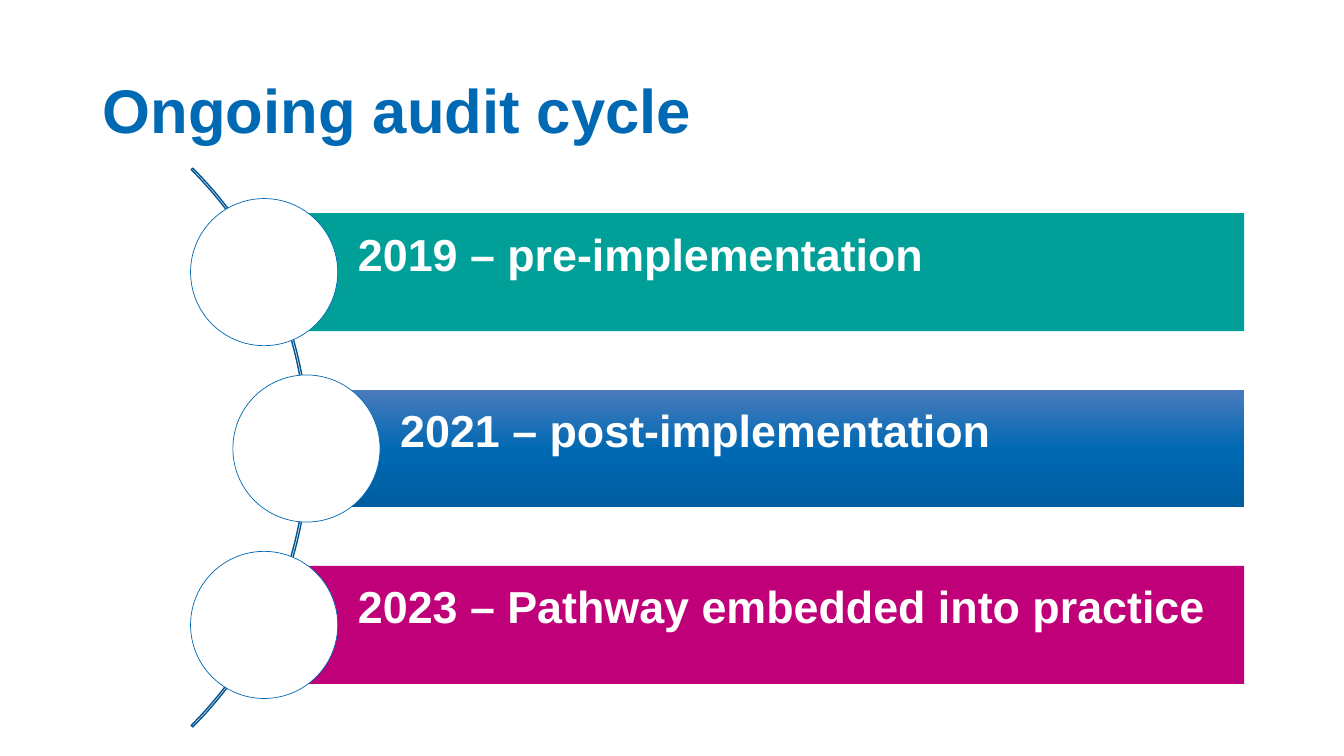
import copy

import pptx
import pptx.dml.color
import pptx.enum.shapes
import pptx.enum.text
import pptx.oxml.ns
import pptx.util
from pptx.util import Inches

RGBColor = pptx.dml.color.RGBColor
MSO_SHAPE = pptx.enum.shapes.MSO_SHAPE
MSO_ANCHOR = pptx.enum.text.MSO_ANCHOR

WHITE = RGBColor(0xFF, 0xFF, 0xFF)
BLUE = RGBColor(0x00, 0x69, 0xB3)
LIGHT_BLUE = RGBColor(0x4B, 0x7B, 0xBC)
DEEP_BLUE = RGBColor(0x00, 0x5D, 0x9F)
ARC_BLUE = RGBColor(0x00, 0x54, 0x8F)
TEAL = RGBColor(0x00, 0x9F, 0x98)
MAGENTA = RGBColor(0xBF, 0x00, 0x78)

BAR_RIGHT = 12.34
BAR_HEIGHT = 1.17
CIRCLE_SIZE = 1.46
FIRST_CENTRE = 2.7
STAGE_STEP = 1.75

STAGES = [
    ("2019 – pre-implementation", 2.62, [TEAL]),
    ("2021 – post-implementation", 3.04, [LIGHT_BLUE, BLUE, DEEP_BLUE]),
    ("2023 – Pathway embedded into practice", 2.62, [MAGENTA]),
]


def add_text(para, text, size, colour):
    para.alignment = pptx.enum.text.PP_ALIGN.LEFT
    span = para.add_run()
    span.text = text
    span.font.name = "Arial"
    span.font.size = pptx.util.Pt(size)
    span.font.bold = True
    span.font.color.rgb = colour


def fill_title(title, text):
    title.left, title.top = Inches(0.92), Inches(0.4)
    title.width, title.height = Inches(11.5), Inches(1.45)
    frame = title.text_frame
    frame.auto_size = pptx.enum.text.MSO_AUTO_SIZE.NONE
    frame.vertical_anchor = MSO_ANCHOR.MIDDLE
    frame.paragraphs[0].line_spacing = 0.9
    add_text(frame.paragraphs[0], text, 44, BLUE)


def add_plain_shape(page, kind, left, top, width, height):
    shape = page.shapes.add_shape(
        kind, Inches(left), Inches(top), Inches(width), Inches(height))
    shape.shadow.inherit = False
    return shape


def set_outline(shape, colour, width):
    shape.line.color.rgb = colour
    shape.line.width = pptx.util.Pt(width)


def paint(shape, colours):
    if len(colours) == 1:
        shape.fill.solid()
        shape.fill.fore_color.rgb = colours[0]
        return
    shape.fill.gradient()
    shape.fill.gradient_angle = 270
    stop_list = next(shape._element.spPr.iter(pptx.oxml.ns.qn("a:gsLst")))
    while len(stop_list) < len(colours):
        stop_list.append(copy.deepcopy(stop_list[-1]))
    for index, stop in enumerate(shape.fill.gradient_stops):
        stop.position = index / (len(colours) - 1)
        stop.color.rgb = colours[index]


def add_arc(page):
    arc = add_plain_shape(page, MSO_SHAPE.BLOCK_ARC, -4.78, 0.52, 7.84, 7.84)
    for index, value in enumerate((189, 27, 0.00275)):
        arc.adjustments[index] = value
    arc.fill.background()
    set_outline(arc, ARC_BLUE, 1)


def add_stage(page, centre, text, left, colours):
    bar = add_plain_shape(page, MSO_SHAPE.RECTANGLE, left,
                          centre - BAR_HEIGHT / 2, BAR_RIGHT - left, BAR_HEIGHT)
    paint(bar, colours)
    bar.line.fill.background()
    frame = bar.text_frame
    frame.word_wrap = True
    frame.vertical_anchor = MSO_ANCHOR.TOP
    frame.margin_left, frame.margin_right = Inches(0.93), Inches(0.09)
    frame.margin_top, frame.margin_bottom = Inches(0.13), Inches(0.09)
    add_text(frame.paragraphs[0], text, 32, WHITE)

    circle = add_plain_shape(page, MSO_SHAPE.OVAL, left - CIRCLE_SIZE / 2,
                             centre - CIRCLE_SIZE / 2, CIRCLE_SIZE, CIRCLE_SIZE)
    paint(circle, [WHITE])
    set_outline(circle, BLUE, 0.5)


def main():
    deck = pptx.Presentation()
    deck.slide_width, deck.slide_height = Inches(13.33), Inches(7.5)
    page = deck.slides.add_slide(deck.slide_layouts[5])
    fill_title(page.shapes.title, "Ongoing audit cycle")
    add_arc(page)
    for index, (text, left, colours) in enumerate(STAGES):
        add_stage(page, FIRST_CENTRE + index * STAGE_STEP, text, left, colours)
    deck.save("out.pptx")


if __name__ == "__main__":
    main()
